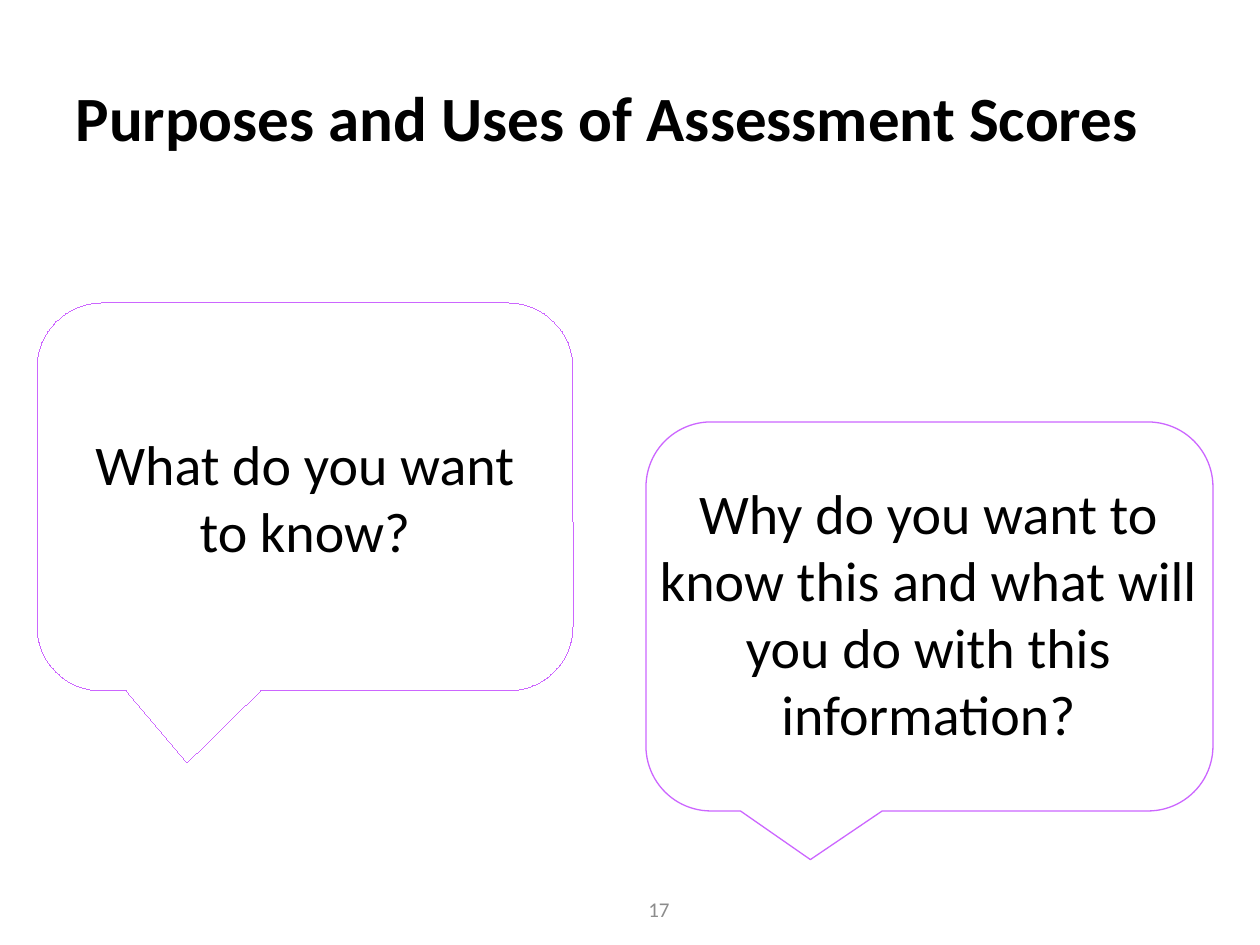
"""Build the slide on the purposes and uses of assessment scores."""
from dataclasses import dataclass

import lxml.etree
import pptx
import pptx.dml.color
import pptx.enum.shapes
import pptx.enum.text
import pptx.oxml.ns
import pptx.util

PX = pptx.util.Inches(1) / 126
COLORS = {"text": "000000", "outline": "CC66FF", "number": "8C8C8C"}
ALIGN = pptx.enum.text.PP_ALIGN
ANCHOR = pptx.enum.text.MSO_ANCHOR
CALLOUT = pptx.enum.shapes.MSO_SHAPE.ROUNDED_RECTANGULAR_CALLOUT


@dataclass(frozen=True)
class Box:
    left: int
    top: int
    width: int
    height: int

    def emu(self) -> tuple[int, ...]:
        return tuple(round(side * PX) for side in (self.left, self.top, self.width, self.height))


@dataclass(frozen=True)
class Question:
    text: str
    box: Box
    anchor: ANCHOR


KNOW = Question("What do you want to know?", Box(37, 303, 536, 388), ANCHOR.MIDDLE)
WHY = Question(
    "Why do you want to know this and what will you do with this information?",
    Box(635, 472, 587, 289),
    ANCHOR.TOP,
)
WHY_BUBBLE = Box(646, 422, 567, 389)


def rgb(name: str) -> pptx.dml.color.RGBColor:
    return pptx.dml.color.RGBColor.from_string(COLORS[name])


def place(shape, box: Box) -> None:
    shape.left, shape.top, shape.width, shape.height = box.emu()


def write(shape, text: str, size: int, align: ALIGN, anchor: ANCHOR,
          color: str = "text", bold: bool = False) -> None:
    frame = shape.text_frame
    frame.word_wrap = True
    frame.auto_size = pptx.enum.text.MSO_AUTO_SIZE.NONE
    frame.vertical_anchor = anchor
    paragraph = frame.paragraphs[0]
    paragraph.add_run().text = text
    paragraph.alignment = align
    font = paragraph.font
    font.name, font.size, font.bold = "Calibri", pptx.util.Pt(size), bold
    font.color.rgb = rgb(color)


def ask(placeholder, question: Question) -> None:
    place(placeholder, question.box)
    paragraph = placeholder.text_frame.paragraphs[0]
    properties = paragraph._p.get_or_add_pPr()
    properties.set("marL", "0")
    properties.set("indent", "0")
    lxml.etree.SubElement(properties, pptx.oxml.ns.qn("a:buNone"))
    paragraph.space_before = pptx.util.Pt(0)
    write(placeholder, question.text, 32, ALIGN.CENTER, question.anchor)


def outline(bubble, tip_x: float, tip_y: float) -> None:
    for index, value in enumerate((tip_x, tip_y, 0.167)):
        bubble.adjustments[index] = value
    bubble.fill.background()
    bubble.line.color.rgb = rgb("outline")
    bubble.line.width = pptx.util.Pt(0)


def main() -> None:
    deck = pptx.Presentation()
    deck.slide_width, deck.slide_height = round(1260 * PX), round(945 * PX)
    slide = deck.slides.add_slide(deck.slide_layouts[3])
    title, know, why = slide.placeholders

    place(title, Box(63, 37, 1134, 158))
    write(title, "Purposes and Uses of Assessment Scores", 36, ALIGN.LEFT, ANCHOR.MIDDLE, bold=True)

    ask(know, KNOW)
    lxml.etree.SubElement(know._element.spPr, pptx.oxml.ns.qn("a:prstGeom"), prst="wedgeRoundRectCallout")
    outline(know, -0.22, 0.685)

    ask(why, WHY)
    why_bubble = slide.shapes.add_shape(CALLOUT, *WHY_BUBBLE.emu())
    why_bubble.shadow.inherit = False
    outline(why_bubble, -0.21, 0.625)

    page_number = slide.shapes.add_textbox(*Box(388, 884, 294, 50).emu())
    write(page_number, "17", 12, ALIGN.RIGHT, ANCHOR.MIDDLE, color="number")

    deck.save("out.pptx")


if __name__ == "__main__":
    main()
